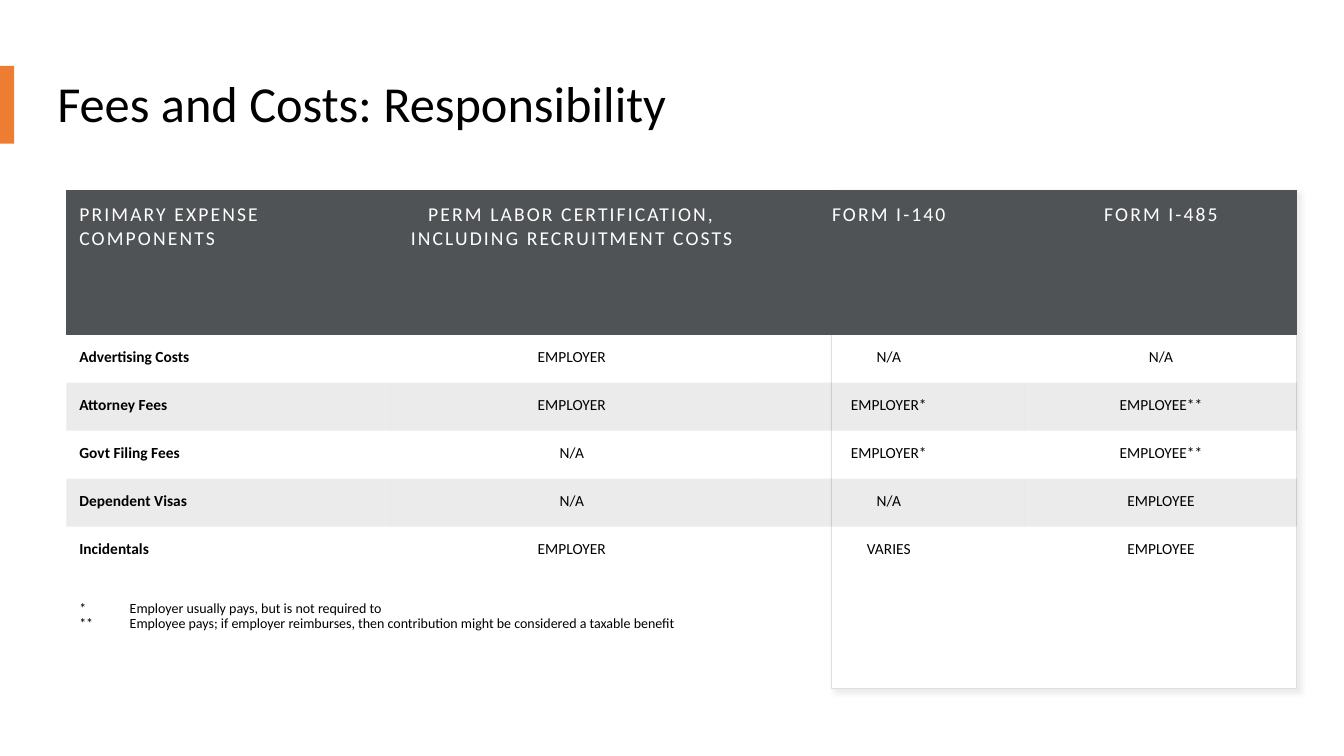
from lxml import etree
from pptx import Presentation
from pptx.dml.color import RGBColor
from pptx.enum.shapes import MSO_SHAPE
from pptx.enum.text import MSO_ANCHOR, MSO_AUTO_SIZE, PP_ALIGN
from pptx.oxml.ns import qn
from pptx.util import Cm, Pt

FONT = "Calibri"
ORANGE, SLATE, WHITE, BLACK = "ED7D31", "505356", "FFFFFF", "000000"
NO_STYLE = "{2D5ABB26-0587-4C30-8999-92F81FD0307C}"
COL_WIDTHS = (8.18, 9.12, 6.86, 6.86)
HEADER_HEIGHT, ROW_HEIGHT = 3.64, 1.21

HEADER = ("PRIMARY EXPENSE COMPONENTS",
          "PERM LABOR CERTIFICATION, INCLUDING RECRUITMENT COSTS",
          "FORM I-140", "FORM I-485")
EXPENSES = (
    ("Advertising Costs", "EMPLOYER", "N/A", "N/A"),
    ("Attorney Fees", "EMPLOYER", "EMPLOYER*", "EMPLOYEE**"),
    ("Govt Filing Fees", "N/A", "EMPLOYER*", "EMPLOYEE**"),
    ("Dependent Visas", "N/A", "N/A", "EMPLOYEE"),
    ("Incidentals", "EMPLOYER", "VARIES", "EMPLOYEE"),
)
FOOTNOTES = (
    "* \tEmployer usually pays, but is not required to",
    "** \tEmployee pays; if employer reimburses, then contribution "
    "might be considered a taxable benefit",
)


def rgb(color):
    return RGBColor.from_string(color)


def format_runs(p, size, color=BLACK, bold=False, spacing=0):
    for r in p.runs:
        r.font.name = FONT
        r.font.size = Pt(size)
        r.font.bold = bold
        r.font.color.rgb = rgb(color)
        if spacing:
            r.font._element.set("spc", str(int(spacing * 100)))


def add_alpha(fill_parent, percent):
    """Set the opacity of the first RGB colour inside an XML element."""
    clr = next(fill_parent.iter(qn("a:srgbClr")))
    etree.SubElement(clr, qn("a:alpha"), val=str(percent * 1000))


def add_rect(s, box, fill):
    sp = s.shapes.add_shape(MSO_SHAPE.RECTANGLE, *map(Cm, box))
    sp.shadow.inherit = False
    sp.fill.solid()
    sp.fill.fore_color.rgb = rgb(fill)
    sp.line.fill.background()
    return sp


def add_title(s, left, top, width, height):
    sp = s.shapes.title
    sp.left, sp.top, sp.width, sp.height = map(Cm, (left, top, width, height))
    tf = sp.text_frame
    tf.text = "Fees and Costs: Responsibility"
    tf.auto_size = MSO_AUTO_SIZE.NONE
    tf.vertical_anchor = MSO_ANCHOR.MIDDLE
    p = tf.paragraphs[0]
    p.alignment = PP_ALIGN.LEFT
    p.line_spacing = 0.9
    format_runs(p, 36)
    add_rect(s, (0, top + 0.52, 0.36, 1.96), ORANGE)


def add_forms_panel(s, box):
    """Outlined white panel with a soft shadow behind the form columns."""
    sp = add_rect(s, box, WHITE)
    sp.line.color.rgb = rgb("DEDEDE")
    sp.line.width = Pt(0.75)
    effects = sp._element.spPr.find(qn("a:effectLst"))
    shadow = etree.SubElement(effects, qn("a:outerShdw"), blurRad=str(Pt(4)),
                              dist=str(Pt(3)), dir=str(45 * 60000))
    etree.SubElement(shadow, qn("a:srgbClr"), val="D9D9D9")
    add_alpha(shadow, 50)


def add_footnotes(s, box):
    tf = s.shapes.add_textbox(*map(Cm, box)).text_frame
    tf.word_wrap = True
    tf.vertical_anchor = MSO_ANCHOR.MIDDLE
    tf.margin_left = Cm(1.52)
    tf.margin_top = Cm(0.3)
    tf.text = "\n".join(FOOTNOTES)
    for p in tf.paragraphs:
        p.line_spacing = 0.9
        format_runs(p, 10)


def format_cell(cell, row, col):
    cell.margin_left = cell.margin_right = Cm(0.33)
    cell.margin_top = cell.margin_bottom = Cm(0.33)
    p = cell.text_frame.paragraphs[0]
    p.alignment = PP_ALIGN.CENTER if col else PP_ALIGN.LEFT
    if row == 0:
        format_runs(p, 14, WHITE, spacing=1.5)
    else:
        format_runs(p, 11, bold=col == 0)
    if row % 2 and row:
        cell.fill.background()
        return
    cell.fill.solid()
    cell.fill.fore_color.rgb = rgb(BLACK if row else SLATE)
    if row:
        add_alpha(cell._tc.tcPr, 8)


def add_expense_table(s, left, top):
    rows = (HEADER, *EXPENSES)
    height = HEADER_HEIGHT + ROW_HEIGHT * len(EXPENSES)
    table = s.shapes.add_table(len(rows), len(HEADER), Cm(left), Cm(top),
                               Cm(sum(COL_WIDTHS)), Cm(height)).table
    table.first_row = table.horz_banding = False
    table._tbl.tblPr.find(qn("a:tableStyleId")).text = NO_STYLE
    for column, width in zip(table.columns, COL_WIDTHS):
        column.width = Cm(width)
    for i, texts in enumerate(rows):
        table.rows[i].height = Cm(ROW_HEIGHT if i else HEADER_HEIGHT)
        for j, text in enumerate(texts):
            cell = table.cell(i, j)
            cell.text = text
            format_cell(cell, i, j)


def main():
    prs = Presentation()
    prs.slide_width, prs.slide_height = Cm(33.87), Cm(19.05)
    s = prs.slides.add_slide(prs.slide_layouts[5])
    add_title(s, 1.19, 1.14, 31.12, 3.07)
    add_forms_panel(s, (20.96, 4.79, 11.71, 12.55))
    add_footnotes(s, (0.48, 12.29, 29.03, 6.3))
    add_expense_table(s, 1.67, 4.79)
    prs.save("out.pptx")


if __name__ == "__main__":
    main()
